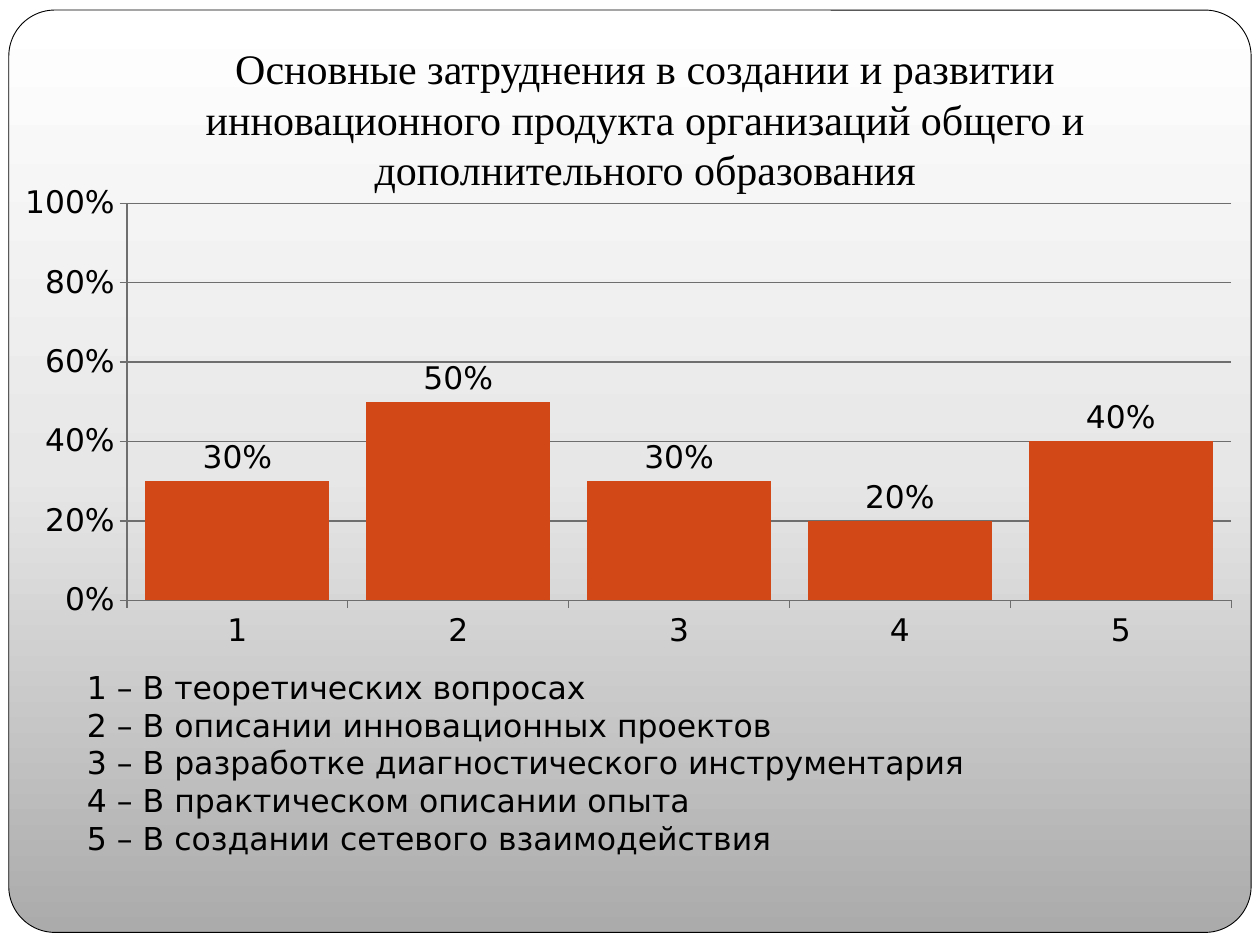
from lxml import etree
from pptx import Presentation
from pptx.chart.data import CategoryChartData
from pptx.dml.color import RGBColor
from pptx.enum.chart import XL_CHART_TYPE as ChartType, XL_LABEL_POSITION as LabelPosition, XL_TICK_MARK as TickMark
from pptx.enum.shapes import MSO_SHAPE as ShapeType
from pptx.enum.text import MSO_ANCHOR as Anchor, MSO_AUTO_SIZE as AutoSize, PP_ALIGN as Align
from pptx.oxml import parse_xml
from pptx.oxml.ns import nsdecls, qn
from pptx.util import Inches, Pt

COLORS = {
    "text": "000000",
    "page": "FFFFFF",
    "panel_bottom": "ABABAB",
    "panel_middle": "E7E7E7",
    "panel_top": "FFFFFF",
    "grid": "6E6E6E",
    "bar": "D34817",
}
TITLE = ("Основные затруднения в создании и развитии инновационного продукта "
         "организаций общего и дополнительного образования")
DIFFICULTIES = [
    ("1", 0.3, "В теоретических вопросах"),
    ("2", 0.5, "В описании инновационных проектов"),
    ("3", 0.3, "В разработке диагностического инструментария"),
    ("4", 0.2, "В практическом описании опыта"),
    ("5", 0.4, "В создании сетевого взаимодействия"),
]


def color(name):
    return RGBColor.from_string(COLORS[name])


def fill_placeholder(shape, box, lines, font_name, size, align):
    shape.left, shape.top, shape.width, shape.height = map(Inches, box)
    frame = shape.text_frame
    frame.word_wrap = True
    frame.auto_size = AutoSize.SHAPE_TO_FIT_TEXT
    frame.vertical_anchor = Anchor.TOP
    for index, line in enumerate(lines):
        paragraph = frame.add_paragraph() if index else frame.paragraphs[0]
        paragraph.alignment = align
        paragraph.space_before = Pt(0)
        properties = paragraph._p.get_or_add_pPr()
        properties.set("marL", "0")
        properties.set("indent", "0")
        etree.SubElement(properties, qn("a:buNone"))
        run = paragraph.add_run()
        run.text = line
        run.font.name = font_name
        run.font.size = Pt(size)
        run.font.color.rgb = color("text")


presentation = Presentation()
presentation.slide_width = Inches(10)
presentation.slide_height = Inches(7.5)
slide = presentation.slides.add_slide(presentation.slide_layouts[1])
slide.background.fill.solid()
slide.background.fill.fore_color.rgb = color("page")

# Rounded gradient panel, behind everything
panel = slide.shapes.add_shape(ShapeType.ROUNDED_RECTANGLE, Inches(0.07), Inches(0.08),
                               Inches(9.86), Inches(7.32))
panel.adjustments[0] = 0.05
panel.shadow.inherit = False
panel.line.color.rgb = color("text")
panel.line.width = Pt(0.5)
stops = "".join(
    f'<a:gs pos="{position * 1000}"><a:srgbClr val="{COLORS[name]}"/></a:gs>'
    for position, name in [(0, "panel_bottom"), (50, "panel_middle"), (100, "panel_top")])
gradient = parse_xml(f'<a:gradFill {nsdecls("a")} rotWithShape="1"><a:gsLst>{stops}</a:gsLst>'
                     '<a:lin ang="16200000" scaled="0"/></a:gradFill>')
panel.element.spPr.find(qn("a:prstGeom")).addnext(gradient)
slide.shapes.element.insert(2, panel.element)

# Column chart
chart_data = CategoryChartData(number_format="0%")
chart_data.categories = [number for number, share, meaning in DIFFICULTIES]
chart_data.add_series("Series 1", [share for number, share, meaning in DIFFICULTIES])
chart_frame = slide.shapes.add_chart(ChartType.COLUMN_CLUSTERED, Inches(0.2), Inches(1.47),
                                     Inches(9.61), Inches(3.86), chart_data)
slide.shapes.element.insert(3, chart_frame.element)
chart = chart_frame.chart
chart.has_legend = False
chart.has_title = False
chart.font.name = "DejaVu Sans"
chart.font.size = Pt(18)
chart.font.color.rgb = color("text")

value_axis = chart.value_axis
value_axis.minimum_scale = 0
value_axis.maximum_scale = 1
value_axis.major_unit = 0.2
value_axis.has_major_gridlines = True
value_axis.tick_labels.number_format = "0%"
value_axis.tick_labels.number_format_is_linked = False
for axis in (value_axis, chart.category_axis):
    axis.major_tick_mark = TickMark.OUTSIDE
    axis.minor_tick_mark = TickMark.NONE
for line in (value_axis.format.line, chart.category_axis.format.line,
             value_axis.major_gridlines.format.line):
    line.color.rgb = color("grid")
    line.width = Pt(0.75)

plot = chart.plots[0]
plot.vary_by_categories = False
plot.gap_width = 20
plot.overlap = 100
series = plot.series[0]
series.format.fill.solid()
series.format.fill.fore_color.rgb = color("bar")
labels = series.data_labels
labels.show_value = True
labels.number_format = "0%"
labels.number_format_is_linked = False
labels.position = LabelPosition.OUTSIDE_END

# Inner plot area as fractions of the chart
plot_area = chart.element.chart.plotArea
for old_layout in plot_area.findall(qn("c:layout")):
    plot_area.remove(old_layout)
places = "".join(f'<c:{tag} val="{value}"/>' for tag, value in [
    ("layoutTarget", "inner"), ("xMode", "edge"), ("yMode", "edge"),
    ("x", 0.078), ("y", 0.026), ("w", 0.918), ("h", 0.826)])
plot_area.insert(0, parse_xml(
    f'<c:layout {nsdecls("c")}><c:manualLayout>{places}</c:manualLayout></c:layout>'))

# Title and key to the categories
fill_placeholder(slide.shapes.title, (0.59, 0.29, 9.06, 1.31), [TITLE],
                 "Times New Roman", 24, Align.CENTER)
fill_placeholder(slide.placeholders[1], (0.59, 5.25, 8.82, 1.62),
                 [f"{number} – {meaning}" for number, share, meaning in DIFFICULTIES],
                 "DejaVu Sans", 18, Align.LEFT)

presentation.save("out.pptx")
